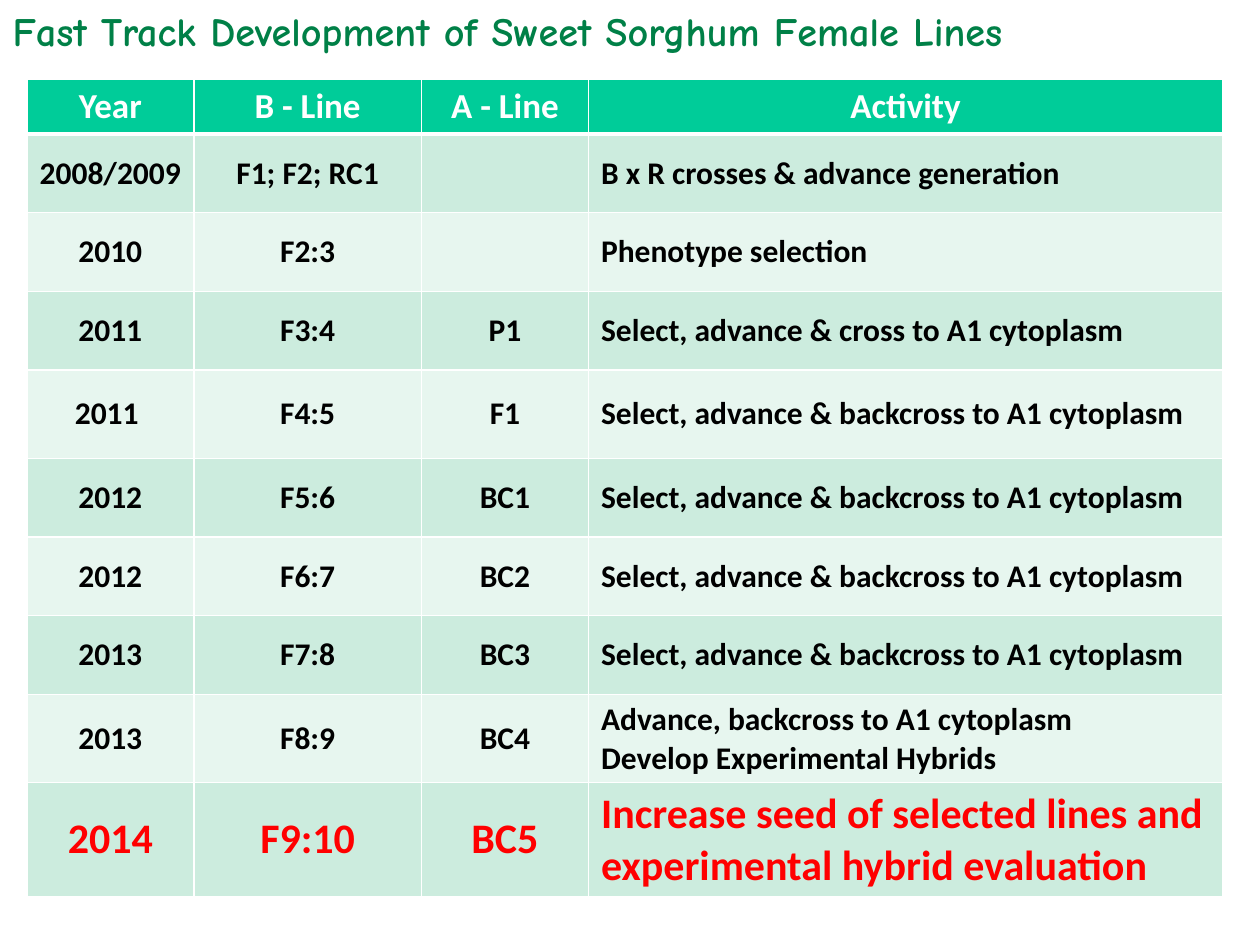
from dataclasses import dataclass

import pptx
import pptx.dml.color
import pptx.enum.text
import pptx.oxml.ns
import pptx.table
import pptx.util
from lxml import etree

Pt = pptx.util.Pt
RGBColor = pptx.dml.color.RGBColor
Align = pptx.enum.text.PP_ALIGN
Anchor = pptx.enum.text.MSO_ANCHOR
qn = pptx.oxml.ns.qn

WHITE = RGBColor(0xFF, 0xFF, 0xFF)
BLACK = RGBColor(0x00, 0x00, 0x00)
RED = RGBColor(0xFF, 0x00, 0x00)
TITLE_GREEN = RGBColor(0x00, 0x80, 0x47)
HEADER_GREEN = RGBColor(0x00, 0xCC, 0x99)
BANDS = (RGBColor(0xCC, 0xEC, 0xDE), RGBColor(0xE7, 0xF6, 0xEF))

COLUMN_WIDTHS = (95.5, 130, 95.5, 362.3)
ACTIVITY_COLUMN = 3
BACKCROSS = "Select, advance & backcross to A1 cytoplasm"


@dataclass(frozen=True)
class Season:
    year: str
    b_line: str
    a_line: str
    activity: str
    height: float = 45
    size: float = 18
    color: RGBColor = BLACK

    def texts(self) -> tuple[str, ...]:
        return self.year, self.b_line, self.a_line, self.activity


HEADER = Season("Year", "B - Line", "A - Line", "Activity", 31.5, 20, WHITE)
SEASONS = (
    Season("2008/2009", "F1; F2; RC1", "", "B x R crosses & advance generation"),
    Season("2010", "F2:3", "", "Phenotype selection"),
    Season("2011", "F3:4", "P1", "Select, advance & cross to A1 cytoplasm"),
    Season("2011 ", "F4:5", "F1", BACKCROSS, 50.4),
    Season("2012", "F5:6", "BC1", BACKCROSS),
    Season("2012", "F6:7", "BC2", BACKCROSS),
    Season("2013", "F7:8", "BC3", BACKCROSS),
    Season("2013", "F8:9", "BC4",
           "Advance, backcross to A1 cytoplasm\nDevelop Experimental Hybrids", 50.4),
    Season("2014", "F9:10", "BC5",
           "Increase seed of selected lines and experimental hybrid evaluation",
           65, 24, RED),
)


def set_borders(cell: pptx.table._Cell, bottom: float, top: float) -> None:
    """Draw white lines on all four sides; call before setting the fill."""
    properties = cell._tc.get_or_add_tcPr()
    for side, width in (("L", 1), ("R", 1), ("T", top), ("B", bottom)):
        line = etree.SubElement(properties, qn(f"a:ln{side}"), w=str(Pt(width)))
        fill = etree.SubElement(line, qn("a:solidFill"))
        etree.SubElement(fill, qn("a:srgbClr"), val=str(WHITE))


def fill_row(table: pptx.table.Table, index: int, season: Season) -> None:
    is_header = index == 0
    table.rows[index].height = Pt(season.height)
    for column, text in enumerate(season.texts()):
        cell = table.cell(index, column)
        set_borders(cell, bottom=3 if is_header else 1, top=3 if index == 1 else 1)
        cell.fill.solid()
        cell.fill.fore_color.rgb = HEADER_GREEN if is_header else BANDS[(index - 1) % 2]
        cell.vertical_anchor = Anchor.TOP if is_header else Anchor.MIDDLE
        cell.text = text
        centred = is_header or column != ACTIVITY_COLUMN
        for para in cell.text_frame.paragraphs:
            para.alignment = Align.CENTER if centred else Align.LEFT
            para.font.name = "Calibri"
            para.font.size = Pt(season.size)
            para.font.bold = True
            para.font.color.rgb = season.color


def main() -> None:
    deck = pptx.Presentation()
    deck.slide_width, deck.slide_height = Pt(720), Pt(540)
    page = deck.slides.add_slide(deck.slide_layouts[5])

    # Title
    title = page.shapes.title
    title.left, title.top, title.width, title.height = Pt(0), Pt(0), Pt(655), Pt(35)
    frame = title.text_frame
    frame.text = "Fast Track Development of Sweet Sorghum Female Lines"
    frame.vertical_anchor = Anchor.TOP
    frame.word_wrap = True
    frame.auto_size = pptx.enum.text.MSO_AUTO_SIZE.SHAPE_TO_FIT_TEXT
    para = frame.paragraphs[0]
    para.alignment = Align.LEFT
    para.font.name = "Comic Neue"
    para.font.size = Pt(23)
    para.font.bold = True
    para.font.color.rgb = TITLE_GREEN

    # Breeding schedule
    rows = (HEADER, *SEASONS)
    table = page.shapes.add_table(
        len(rows), len(COLUMN_WIDTHS), Pt(15.3), Pt(45),
        Pt(sum(COLUMN_WIDTHS)), Pt(sum(row.height for row in rows)),
    ).table
    for column, width in zip(table.columns, COLUMN_WIDTHS):
        column.width = Pt(width)
    for index, season in enumerate(rows):
        fill_row(table, index, season)

    deck.save("out.pptx")


if __name__ == "__main__":
    main()
